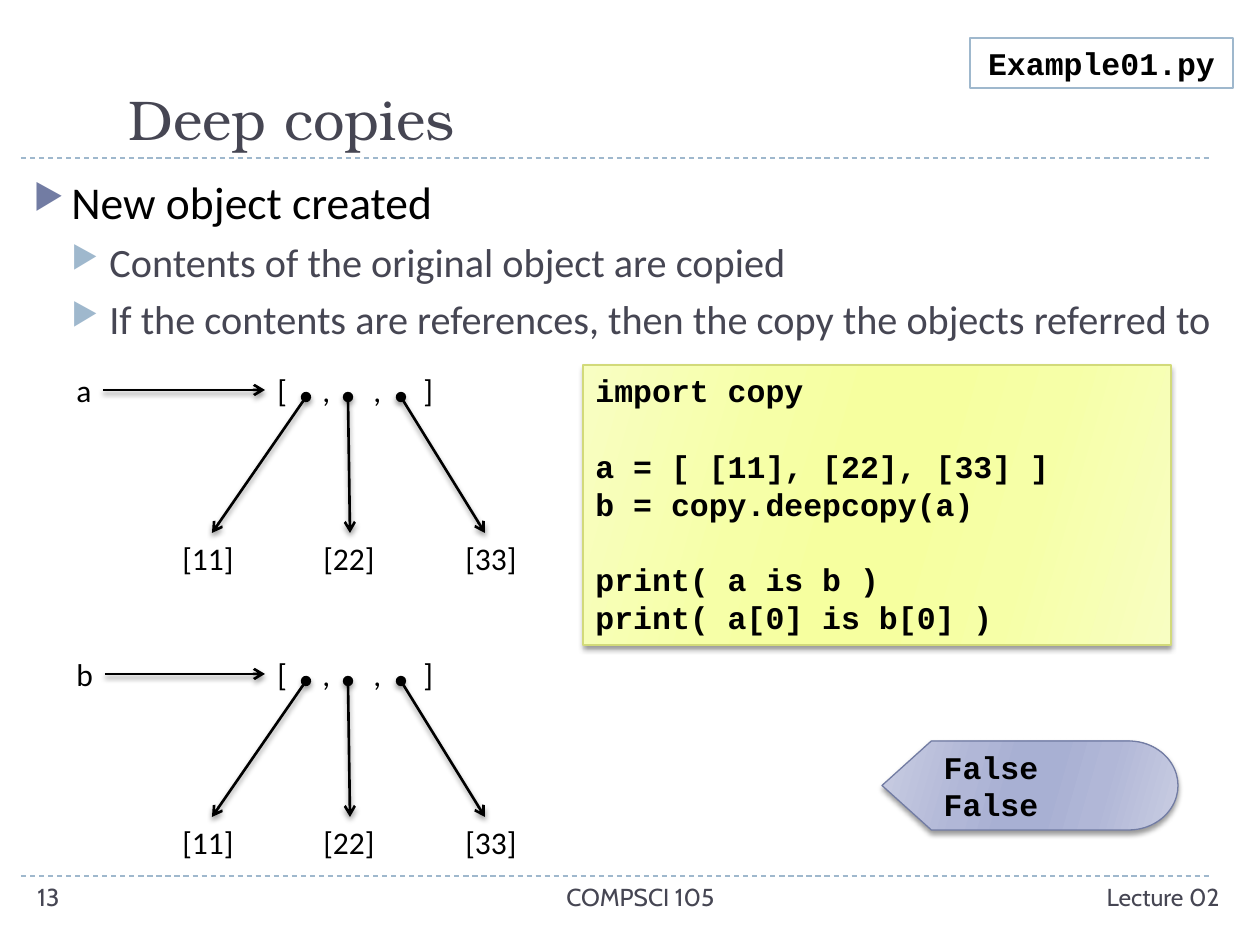
"""Build the slide that explains deep copies of a list."""
from lxml import etree
from pptx import Presentation
from pptx.dml.color import RGBColor
from pptx.enum.dml import MSO_LINE
from pptx.enum.shapes import MSO_CONNECTOR, MSO_SHAPE
from pptx.enum.text import MSO_ANCHOR, PP_ALIGN
from pptx.oxml.ns import qn
from pptx.util import Pt

DASH, STRAIGHT = MSO_LINE.DASH, MSO_CONNECTOR.STRAIGHT
RECTANGLE, DISPLAY = MSO_SHAPE.RECTANGLE, MSO_SHAPE.FLOWCHART_DISPLAY
LEFT, CENTER, RIGHT = PP_ALIGN.LEFT, PP_ALIGN.CENTER, PP_ALIGN.RIGHT
TOP, MIDDLE, BOTTOM = MSO_ANCHOR.TOP, MSO_ANCHOR.MIDDLE, MSO_ANCHOR.BOTTOM

BLACK = RGBColor(0x00, 0x00, 0x00)
WHITE = RGBColor(0xFF, 0xFF, 0xFF)
SLATE = RGBColor(0x46, 0x46, 0x53)
INDIGO = RGBColor(0x72, 0x7C, 0xA3)
SKY = RGBColor(0x9F, 0xB8, 0xCD)
OLIVE = RGBColor(0xD2, 0xDA, 0x7A)
YELLOWS = [RGBColor(0xF8, 0xFE, 0xC2), RGBColor(0xF6, 0xFF, 0xA7), RGBColor(0xF6, 0xFF, 0x9F)]
LILACS = [RGBColor(0xC9, 0xCD, 0xE2), RGBColor(0xB1, 0xB7, 0xD7), RGBColor(0xA8, 0xB0, 0xD3)]
STOPS = [(0, 0), (30, 1), (45, 2), (55, 2), (73, 1), (100, 0)]

SANS, SERIF, MONO, FOOTER = "Calibri", "TeX Gyre Bonum", "Courier New", "Cabin"

TITLE = "Deep copies"
BULLETS = [
    (0, "New object created"),
    (1, "Contents of the original object are copied"),
    (1, "If the contents are references, then the copy the objects referred to"),
]
LEVELS = [
    dict(size=26, color=BLACK, bullet=INDIGO, indent=38, before=0),
    dict(size=23, color=SLATE, bullet=SKY, indent=76, before=5),
]
HANGING = 38
CODE = [
    "import copy",
    "",
    "a = [ [11], [22], [33] ]",
    "b = copy.deepcopy(a)",
    "",
    "print( a is b )",
    "print( a[0] is b[0] )",
]
OUTPUT = ["False", "False"]
FILE_NAME = "Example01.py"
FOOTERS = [
    ("Lecture 02", 917, 315, RIGHT),
    ("COMPSCI 105", 399, 483, CENTER),
    ("13", 25, 273, LEFT),
]
RULES = [876, 158]

DIAGRAMS = [("a", 39, 365), ("b", 41, 649)]
LIST_TEXT, LIST_TABS = "[\t,\t,\t]", [45, 96, 146]
ITEMS = [("[11]", 170, 306, 212), ("[22]", 311, 348, 350), ("[33]", 453, 401, 485)]
NAME_LEFT, LIST_LEFT, LIST_WIDTH = 64, 265, 190
LABEL_HEIGHT, ITEM_WIDTH, DOT_DROP, ITEM_DROP = 50, 78, 32, 168


def px(value):
    return round(value * 914400 / 126)


def add_element(parent, tag, **attributes):
    values = {name: str(value) for name, value in attributes.items()}
    return etree.SubElement(parent, qn(tag), values)


def write_text(shape, lines, size=18, font=SANS, color=BLACK, bold=False,
               align=LEFT, anchor=TOP, wrap=True):
    frame = shape.text_frame
    frame.word_wrap = wrap
    frame.vertical_anchor = anchor
    for index, line in enumerate(lines):
        paragraph = frame.paragraphs[0] if index == 0 else frame.add_paragraph()
        paragraph.alignment = align
        run = paragraph.add_run()
        run.text = line
        run.font.size = Pt(size)
        run.font.name = font
        run.font.bold = bold
        run.font.color.rgb = color
    return shape


def add_text(shapes, lines, left, top, width, height, **text_format):
    box = shapes.add_textbox(px(left), px(top), px(width), px(height))
    return write_text(box, lines, **text_format)


def cast_shadow(effects):
    shadow = add_element(effects, "a:outerShdw", blurRad=Pt(3), dist=Pt(2),
                         dir=5400000, rotWithShape=0)
    color = add_element(shadow, "a:srgbClr", val=BLACK)
    add_element(color, "a:alpha", val=40000)


def add_line(shapes, start, end, color, width):
    line = shapes.add_connector(STRAIGHT, *map(px, start + end))
    line.line.color.rgb = color
    line.line.width = Pt(width)
    return line, add_element(line._element.spPr, "a:effectLst")


def add_arrow(shapes, start, end, dotted=False):
    arrow, effects = add_line(shapes, start, end, BLACK, 1.5)
    outline = arrow.line._get_or_add_ln()
    if dotted:
        add_element(outline, "a:headEnd", type="oval")
    add_element(outline, "a:tailEnd", type="arrow")
    cast_shadow(effects)
    return arrow


def add_panel(shapes, preset, lines, left, top, width, height, border, border_width,
              shades=None, **text_format):
    panel = shapes.add_shape(preset, px(left), px(top), px(width), px(height))
    panel.shadow.inherit = False
    panel.line.color.rgb = border
    panel.line.width = Pt(border_width)
    if shades:
        panel.fill.gradient()
        panel.fill.gradient_angle = 344
        properties = panel._element.spPr
        stops = properties.find(".//" + qn("a:gsLst"))
        stops[:] = []
        for position, shade in STOPS:
            stop = add_element(stops, "a:gs", pos=position * 1000)
            add_element(stop, "a:srgbClr", val=shades[shade])
        cast_shadow(properties.find(qn("a:effectLst")))
    else:
        panel.fill.solid()
        panel.fill.fore_color.rgb = WHITE
    write_text(panel, lines, font=MONO, bold=True, **text_format)


def add_bullets(shapes):
    box = add_text(shapes, [], 21, 168, 1207, 703)
    frame = box.text_frame
    for index, (level, text) in enumerate(BULLETS):
        style = LEVELS[level]
        paragraph = frame.paragraphs[0] if index == 0 else frame.add_paragraph()
        paragraph.level = level
        paragraph.space_before = Pt(style["before"])
        properties = paragraph._p.get_or_add_pPr()
        properties.set("marL", str(px(style["indent"])))
        properties.set("indent", str(-px(HANGING)))
        color = add_element(properties, "a:buClr")
        add_element(color, "a:srgbClr", val=style["bullet"])
        add_element(properties, "a:buSzPct", val=76000)
        add_element(properties, "a:buChar", char="▶")
        run = paragraph.add_run()
        run.text = text
        run.font.size = Pt(style["size"])
        run.font.name = SANS
        run.font.color.rgb = style["color"]


def add_diagram(slide, name, name_width, top):
    shapes = slide.shapes.add_group_shape().shapes
    name_box = add_text(shapes, [name], NAME_LEFT, top, name_width, LABEL_HEIGHT, wrap=False)
    list_box = add_text(shapes, [LIST_TEXT], LIST_LEFT, top, LIST_WIDTH, LABEL_HEIGHT)
    tabs = add_element(list_box.text_frame.paragraphs[0]._p.get_or_add_pPr(), "a:tabLst")
    for position in LIST_TABS:
        add_element(tabs, "a:tab", pos=px(position), algn="l")
    middle = top + LABEL_HEIGHT / 2
    arrow = add_arrow(shapes, (NAME_LEFT + name_width, middle), (LIST_LEFT, middle))
    arrow.begin_connect(name_box, 3)
    arrow.end_connect(list_box, 1)
    item_top = top + ITEM_DROP
    for text, left, dot_x, tip_x in ITEMS:
        item = add_text(shapes, [text], left, item_top, ITEM_WIDTH, LABEL_HEIGHT, wrap=False)
        pointer = add_arrow(shapes, (dot_x, top + DOT_DROP), (tip_x, item_top), dotted=True)
        if tip_x == left + ITEM_WIDTH / 2:
            pointer.end_connect(item, 0)


def main():
    presentation = Presentation()
    presentation.slide_width, presentation.slide_height = px(1260), px(945)
    slide = presentation.slides.add_slide(presentation.slide_layouts[6])
    shapes = slide.shapes
    for y in RULES:
        rule, _ = add_line(shapes, (21, y), (1212, y), SKY, 0.75)
        rule.line.dash_style = DASH
    add_text(shapes, [TITLE], 116, 21, 1110, 137, size=32, font=SERIF, color=SLATE, anchor=BOTTOM)
    add_bullets(shapes)
    for name, name_width, top in DIAGRAMS:
        add_diagram(slide, name, name_width, top)
    add_panel(shapes, RECTANGLE, CODE, 583, 365, 588, 280, OLIVE, 0.75, shades=YELLOWS)
    add_panel(shapes, DISPLAY, OUTPUT, 882, 741, 296, 89, INDIGO, 0.75, shades=LILACS,
              anchor=MIDDLE)
    for text, left, width, align in FOOTERS:
        add_text(shapes, [text], left, 876, width, 50, size=14, font=FOOTER, color=SLATE,
                 align=align)
    add_panel(shapes, RECTANGLE, [FILE_NAME], 970, 38, 263, 50, SKY, 1.5,
              align=CENTER, anchor=MIDDLE)
    presentation.save("out.pptx")


if __name__ == "__main__":
    main()
